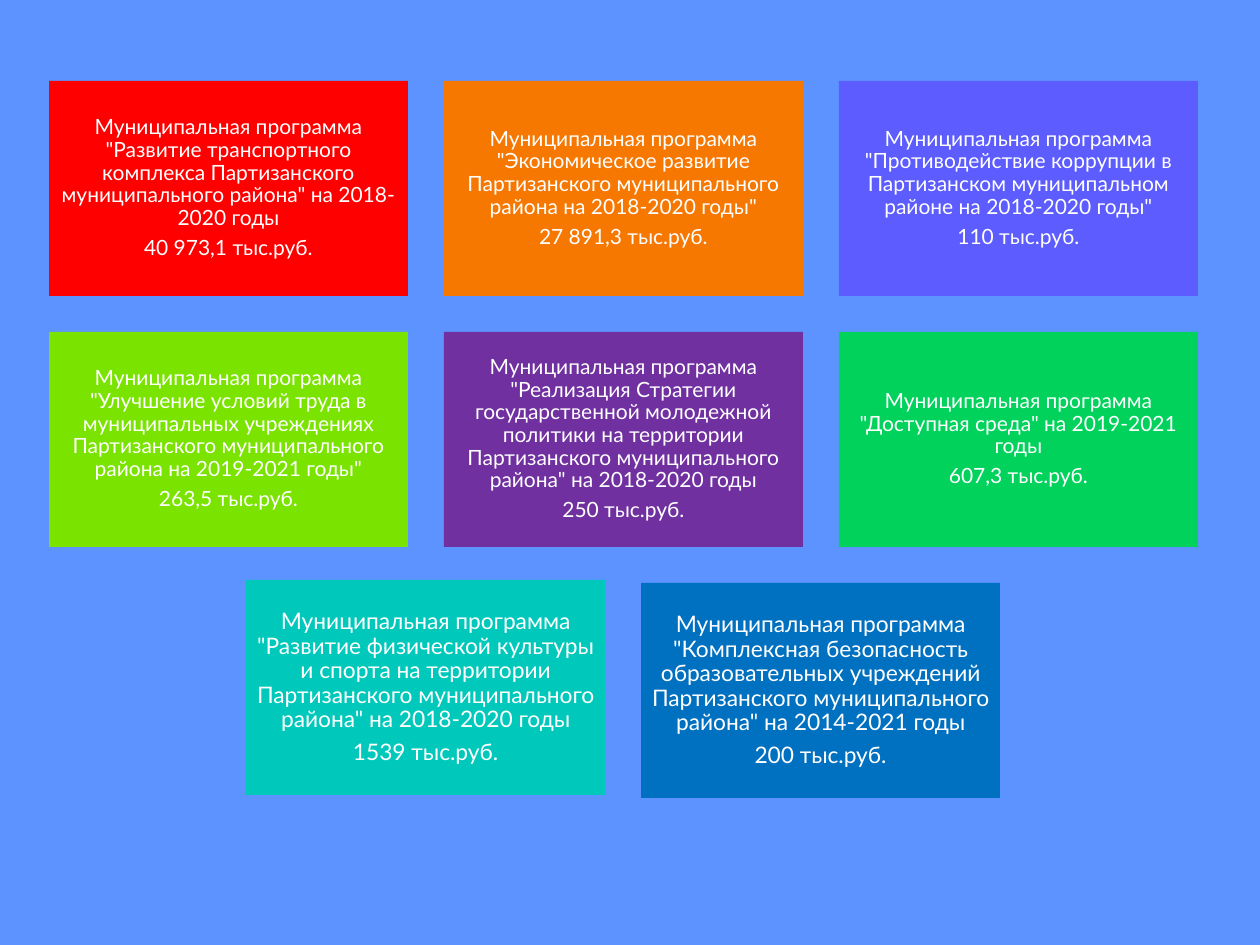
from pptx import Presentation
from pptx import util as u
from pptx.dml.color import RGBColor
from pptx.enum import shapes, text

SCALE = 914400 / 126
FONT = "Lato"
COLORS = {
    "background": "5D93FF",
    "text": "FFFFFF",
    "red": "FF0000",
    "orange": "F67800",
    "indigo": "5C5CFF",
    "lime": "7AE400",
    "purple": "7030A0",
    "green": "00D25C",
    "teal": "00C9BB",
    "blue": "0070C0",
}
TILE_WIDTH, TILE_HEIGHT, GAP = 359, 215, 36
GRID_BOX = (49, 81, 3 * TILE_WIDTH + 2 * GAP, 3 * TILE_HEIGHT + 2 * GAP)

# Each tile: colour, programme, amount, font size, vertical offset
ROWS = [
    [
        ("red", "\"Развитие транспортного комплекса Партизанского муниципального "
         "района\" на 2018-2020 годы", "40 973,1", 12, 0),
        ("orange", "\"Экономическое развитие Партизанского муниципального района "
         "на 2018-2020 годы\"", "27 891,3", 12, 0),
        ("indigo", "\"Противодействие коррупции в Партизанском муниципальном районе "
         "на 2018-2020 годы\"", "110", 12, 0),
    ],
    [
        ("lime", "\"Улучшение условий труда в муниципальных учреждениях Партизанского "
         "муниципального района на 2019-2021 годы\"", "263,5", 12, 0),
        ("purple", "\"Реализация Стратегии государственной молодежной политики на "
         "территории Партизанского муниципального района\" на 2018-2020 годы",
         "250", 12, 0),
        ("green", "\"Доступная среда\" на 2019-2021 годы", "607,3", 12, 0),
    ],
    [
        ("teal", "\"Развитие физической культуры и спорта на территории Партизанского "
         "муниципального района\" на 2018-2020 годы", "1539", 13, -3),
        ("blue", "\"Комплексная безопасность образовательных учреждений Партизанского "
         "муниципального района\" на 2014-2021 годы", "200", 13, 0),
    ],
]


def px(length):
    """Turn whole pixels into EMU."""
    return u.Emu(round(length * SCALE))


def color(name):
    """Look up a named colour."""
    return RGBColor.from_string(COLORS[name])


def add_tile(slide, box, fill, programme, amount, size):
    """Place one coloured programme tile in its box."""
    tile = slide.shapes.add_shape(shapes.MSO_SHAPE.RECTANGLE, *map(px, box))
    tile.shadow.inherit = False
    tile.fill.solid()
    tile.fill.fore_color.rgb = color(fill)
    tile.line.fill.background()
    frame = tile.text_frame
    frame.word_wrap = True
    frame.vertical_anchor = text.MSO_ANCHOR.MIDDLE
    frame.margin_left = frame.margin_right = u.Inches(0.05)
    frame.margin_top = frame.margin_bottom = u.Inches(0.05)
    lines = [f"Муниципальная программа {programme}", f"{amount} тыс.руб."]
    for index, line in enumerate(lines):
        paragraph = frame.add_paragraph() if index else frame.paragraphs[0]
        paragraph.alignment = text.PP_ALIGN.CENTER
        paragraph.line_spacing = 0.9
        paragraph.space_after = u.Pt(round(size * 0.35, 1))
        run = paragraph.add_run()
        run.text = line
        run.font.name = FONT
        run.font.size = u.Pt(size)
        run.font.color.rgb = color("text")


def add_programme_grid(slide, box, rows):
    """Place rows of tiles, each row centred in the box."""
    left, top, width, _ = box
    for row_index, row in enumerate(rows):
        row_width = len(row) * (TILE_WIDTH + GAP) - GAP
        row_left = left + (width - row_width) // 2
        row_top = top + row_index * (TILE_HEIGHT + GAP)
        for column, (fill, programme, amount, size, offset) in enumerate(row):
            tile_left = row_left + column * (TILE_WIDTH + GAP)
            tile_box = (tile_left, row_top + offset, TILE_WIDTH, TILE_HEIGHT)
            add_tile(slide, tile_box, fill, programme, amount, size)


def main():
    """Build and save the presentation."""
    presentation = Presentation()
    presentation.slide_width, presentation.slide_height = px(1260), px(945)
    slide = presentation.slides.add_slide(presentation.slide_layouts[6])
    slide.background.fill.solid()
    slide.background.fill.fore_color.rgb = color("background")
    add_programme_grid(slide, GRID_BOX, ROWS)
    presentation.save("out.pptx")


if __name__ == "__main__":
    main()
